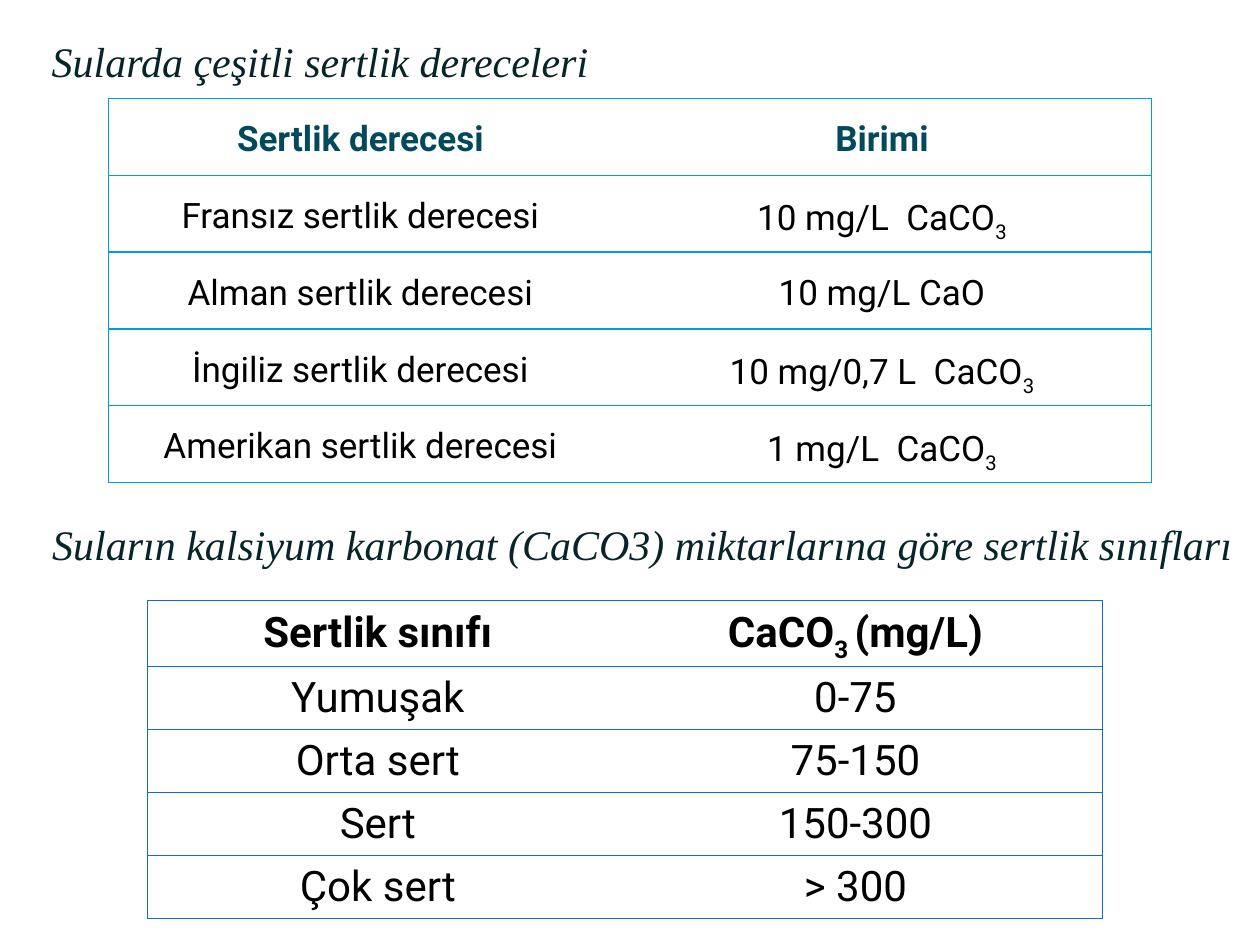
from dataclasses import dataclass

from lxml.etree import SubElement
from pptx import Presentation
from pptx.dml.color import RGBColor
from pptx.enum.text import MSO_ANCHOR as Anchor
from pptx.enum.text import MSO_AUTO_SIZE as AutoSize
from pptx.enum.text import PP_ALIGN as Align
from pptx.oxml.ns import qn
from pptx.util import Pt

COLORS = {
    "heading": "072428",
    "header": "03495C",
    "text": "000000",
    "cell": "FFFFFF",
    "cyan": "009DD9",
    "blue": "0F6FC6",
}
HEADING_FONT, TABLE_FONT = "Times New Roman", "Roboto"


@dataclass(frozen=True)
class Box:
    left: float
    top: float
    width: float
    height: float

    def lengths(self):
        return [Pt(value) for value in (self.left, self.top, self.width, self.height)]


@dataclass(frozen=True)
class HardnessTable:
    box: Box
    first_column: float
    rows: tuple
    size: int
    line_spacing: float
    border: str
    header_color: str


DEGREES = HardnessTable(
    Box(62, 56.3, 596, 219.5), 288,
    (
        ("Sertlik derecesi", "Birimi"),
        ("Fransız sertlik derecesi", "10 mg/L  CaCO|3"),
        ("Alman sertlik derecesi", "10 mg/L CaO"),
        ("İngiliz sertlik derecesi", "10 mg/0,7 L  CaCO|3"),
        ("Amerikan sertlik derecesi", "1 mg/L  CaCO|3"),
    ),
    size=20, line_spacing=1.5, border="cyan", header_color="header",
)
CLASSES = HardnessTable(
    Box(84.2, 343.2, 545.8, 180), 263.5,
    (
        ("Sertlik sınıfı", "CaCO|3 |(mg/L)"),
        ("Yumuşak", "0-75"),
        ("Orta sert", "75-150"),
        ("Sert", "150-300"),
        ("Çok sert", "> 300"),
    ),
    size=24, line_spacing=1.15, border="blue", header_color="text",
)


def write_text(text_frame, text: str, *, font: str, size: float, color: str, align,
               bold=False, italic=False, line_spacing=1.0) -> None:
    """Write one paragraph; every second part between bars is subscript."""
    paragraph = text_frame.paragraphs[0]
    paragraph.alignment = align
    paragraph.line_spacing = line_spacing
    for index, part in enumerate(text.split("|")):
        run = paragraph.add_run()
        run.text = part
        run.font.name, run.font.size = font, Pt(size)
        run.font.bold, run.font.italic = bold, italic
        run.font.color.rgb = RGBColor.from_string(COLORS[color])
        if index % 2:
            run._r.get_or_add_rPr().set("baseline", "-25000")


def format_heading(shape, box: Box, text: str, *, anchor, wrap: bool) -> None:
    shape.left, shape.top, shape.width, shape.height = box.lengths()
    frame = shape.text_frame
    frame.word_wrap, frame.vertical_anchor = wrap, anchor
    frame.auto_size = AutoSize.SHAPE_TO_FIT_TEXT
    write_text(frame, text, font=HEADING_FONT, size=24, color="heading",
               align=Align.JUSTIFY, italic=True)


def set_borders(cell, color: str, hidden_side: str) -> None:
    """Draw 1 pt lines on all sides but the hidden one."""
    properties = cell._tc.get_or_add_tcPr()
    for side in "LRTB":
        line = SubElement(properties, qn(f"a:ln{side}"), w=str(Pt(1)))
        if side == hidden_side:
            SubElement(line, qn("a:noFill"))
        else:
            fill = SubElement(line, qn("a:solidFill"))
            SubElement(fill, qn("a:srgbClr"), val=COLORS[color])


def add_hardness_table(slide, spec: HardnessTable) -> None:
    row_count = len(spec.rows)
    table = slide.shapes.add_table(row_count, 2, *spec.box.lengths()).table
    table.first_row = table.horz_banding = False
    table.columns[0].width = Pt(spec.first_column)
    table.columns[1].width = Pt(spec.box.width - spec.first_column)
    for row_index, texts in enumerate(spec.rows):
        table.rows[row_index].height = Pt(spec.box.height / row_count)
        is_header = row_index == 0
        for column_index, text in enumerate(texts):
            cell = table.cell(row_index, column_index)
            cell.margin_left = cell.margin_right = Pt(5)
            cell.margin_top = cell.margin_bottom = 0
            set_borders(cell, spec.border, "RL"[column_index])
            cell.fill.solid()
            cell.fill.fore_color.rgb = RGBColor.from_string(COLORS["cell"])
            write_text(cell.text_frame, text, font=TABLE_FONT, size=spec.size,
                       color=spec.header_color if is_header else "text",
                       align=Align.CENTER, bold=is_header,
                       line_spacing=spec.line_spacing)


def main() -> None:
    presentation = Presentation()
    presentation.slide_width, presentation.slide_height = Pt(720), Pt(540)
    slide = presentation.slides.add_slide(presentation.slide_layouts[5])

    format_heading(slide.shapes.title, Box(22.3, 16.6, 646.6, 36.4),
                   "Sularda çeşitli sertlik dereceleri", anchor=Anchor.MIDDLE, wrap=True)
    add_hardness_table(slide, DEGREES)

    box = Box(22.7, 292.5, 697, 36.4)
    format_heading(slide.shapes.add_textbox(*box.lengths()), box,
                   "Suların kalsiyum karbonat (CaCO3) miktarlarına göre sertlik sınıfları",
                   anchor=Anchor.TOP, wrap=False)
    add_hardness_table(slide, CLASSES)
    presentation.save("out.pptx")


if __name__ == "__main__":
    main()
